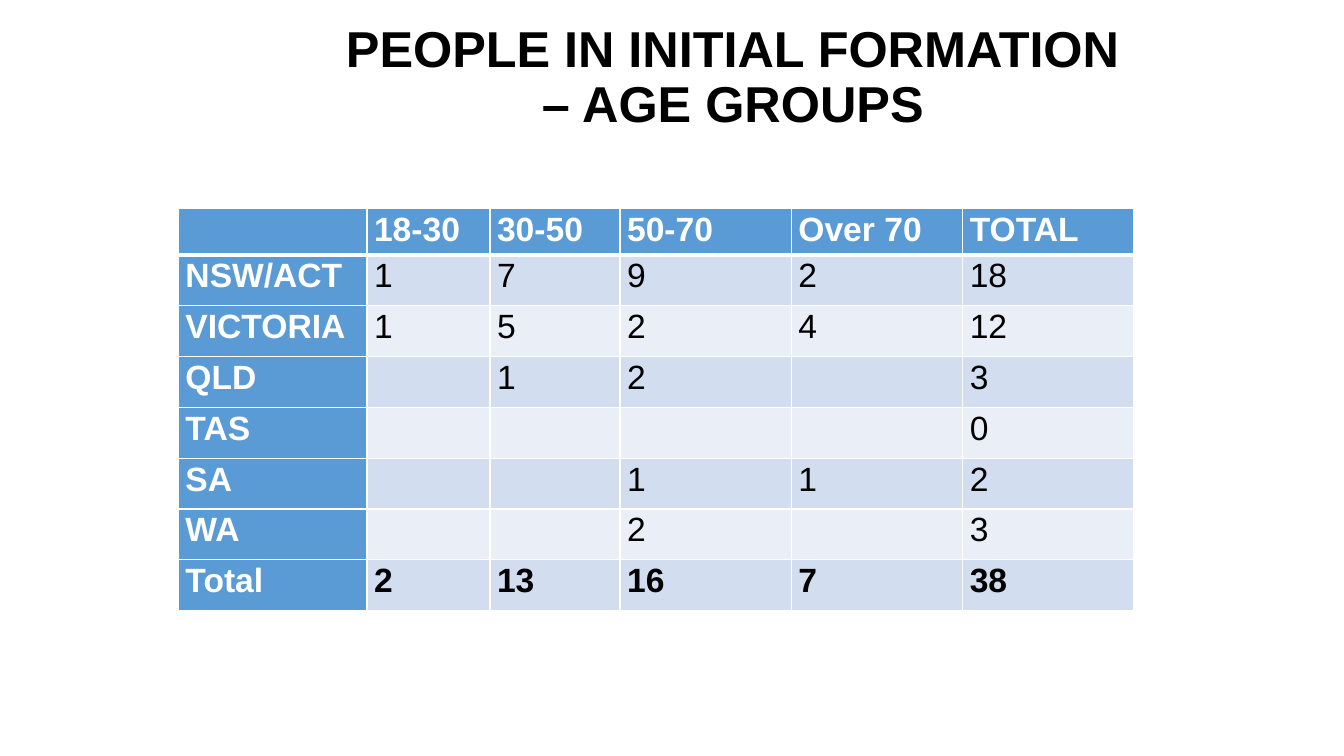
import pptx
import pptx.dml.color
import pptx.enum.text
import pptx.oxml
import pptx.oxml.ns
import pptx.util

HEADERS = ["", "18-30", "30-50", "50-70", "Over 70", "TOTAL"]
REGIONS = [
    ["NSW/ACT", "1", "7", "9", "2", "18"],
    ["VICTORIA", "1", "5", "2", "4", "12"],
    ["QLD", "", "1", "2", "", "3"],
    ["TAS", "", "", "", "", "0"],
    ["SA", "", "", "1", "1", "2"],
    ["WA", "", "", "2", "", "3"],
    ["Total", "2", "13", "16", "7", "38"],
]
# Shares of the slide, in percent
COLUMN_WIDTHS = [14.03, 9.15, 9.68, 12.75, 12.75, 12.75]
ROW_HEIGHTS = [6.13] + [6.72] * len(REGIONS)


def color(hex_code):
    return pptx.dml.color.RGBColor.from_string(hex_code)


def write(tf, text, size=24, fill="000000", bold=False, font="Arial",
          align=pptx.enum.text.PP_ALIGN.LEFT, spacing=1.07):
    p = tf.paragraphs[0]
    p.text = text
    p.alignment = align
    p.line_spacing = spacing
    for r in p.runs:
        r.font.name = font
        r.font.size = pptx.util.Pt(size)
        r.font.bold = bold
        r.font.color.rgb = color(fill)


class Deck:
    ACCENT, BANDS, WHITE = "5B9BD5", ("D2DEEF", "EAEFF7"), "FFFFFF"

    def __init__(self, width, height):
        self.prs = prs = pptx.Presentation()
        prs.slide_width = pptx.util.Inches(width)
        prs.slide_height = pptx.util.Inches(height)
        self.slide = prs.slides.add_slide(prs.slide_layouts[5])

    def x(self, share):
        return round(self.prs.slide_width * share / 100)

    def y(self, share):
        return round(self.prs.slide_height * share / 100)

    def title(self, text, left, top, width, height):
        sp = self.slide.shapes.title
        sp.left, sp.top = self.x(left), self.y(top)
        sp.width, sp.height = self.x(width), self.y(height)
        tf = sp.text_frame
        tf.word_wrap = True
        tf.auto_size = pptx.enum.text.MSO_AUTO_SIZE.NONE
        tf.vertical_anchor = pptx.enum.text.MSO_ANCHOR.BOTTOM
        tf.margin_top = 0
        tf.margin_bottom = pptx.util.Inches(0.37)
        write(tf, text, size=36, bold=True, spacing=0.9,
              align=pptx.enum.text.PP_ALIGN.CENTER)

    def border(self, cell, side, points):
        ns = pptx.oxml.ns.nsdecls("a")
        cell._tc.get_or_add_tcPr().append(pptx.oxml.parse_xml(
            f'<a:ln{side} {ns} w="{pptx.util.Pt(points)}"><a:solidFill>'
            f'<a:srgbClr val="{self.WHITE}"/></a:solidFill></a:ln{side}>'))

    def cell(self, cell, text, row, col, last_row):
        heading = row == 0 or col == 0
        cell.margin_left = cell.margin_right = pptx.util.Inches(0.07)
        cell.margin_top = cell.margin_bottom = 0
        write(cell.text_frame, text, bold=heading or row == last_row,
              fill=self.WHITE if heading else "000000")
        # The rule under the header row is heavier
        widths = {"L": 1, "R": 1, "T": 3 if row == 1 else 1,
                  "B": 3 if row == 0 else 1}
        for side, points in widths.items():
            self.border(cell, side, points)
        cell.fill.solid()
        cell.fill.fore_color.rgb = color(
            self.ACCENT if heading else self.BANDS[(row - 1) % 2])

    def table(self, data, left, top, widths, heights):
        table = self.slide.shapes.add_table(
            len(data), len(data[0]), self.x(left), self.y(top),
            self.x(sum(widths)), self.y(sum(heights))).table
        table.first_col = True
        for column, width in zip(table.columns, widths):
            column.width = self.x(width)
        for row, height in zip(table.rows, heights):
            row.height = self.y(height)
        for i, values in enumerate(data):
            for j, text in enumerate(values):
                self.cell(table.cell(i, j), text, i, j, len(data) - 1)


def main():
    deck = Deck(13.33, 7.5)
    # Heading
    deck.title("PEOPLE IN INITIAL FORMATION\v– AGE GROUPS",
               11.4, 5.2, 86.27, 17.33)
    # Age groups by region
    deck.table([HEADERS] + REGIONS, 13.28, 27.6, COLUMN_WIDTHS, ROW_HEIGHTS)
    deck.prs.save("out.pptx")


if __name__ == "__main__":
    main()
